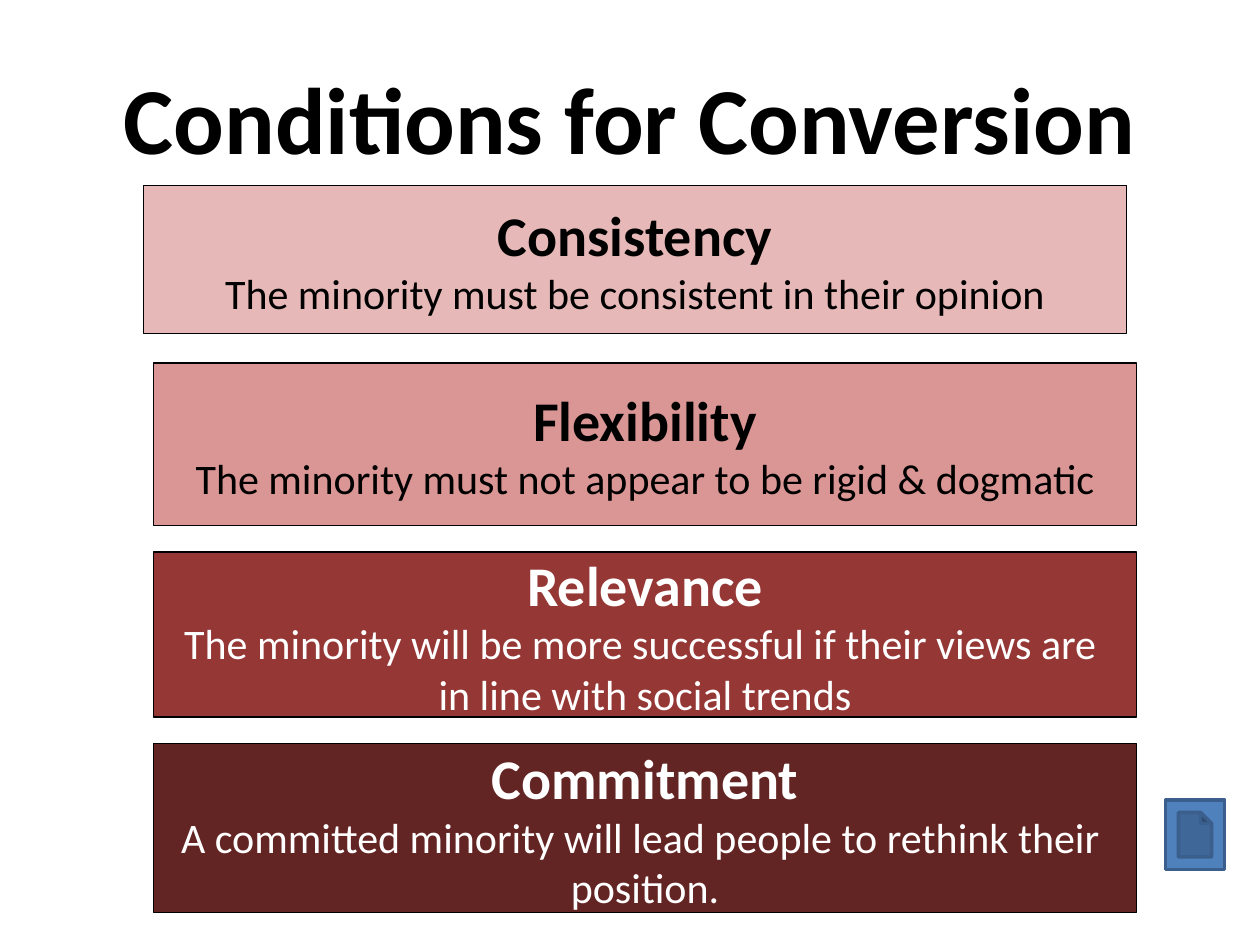
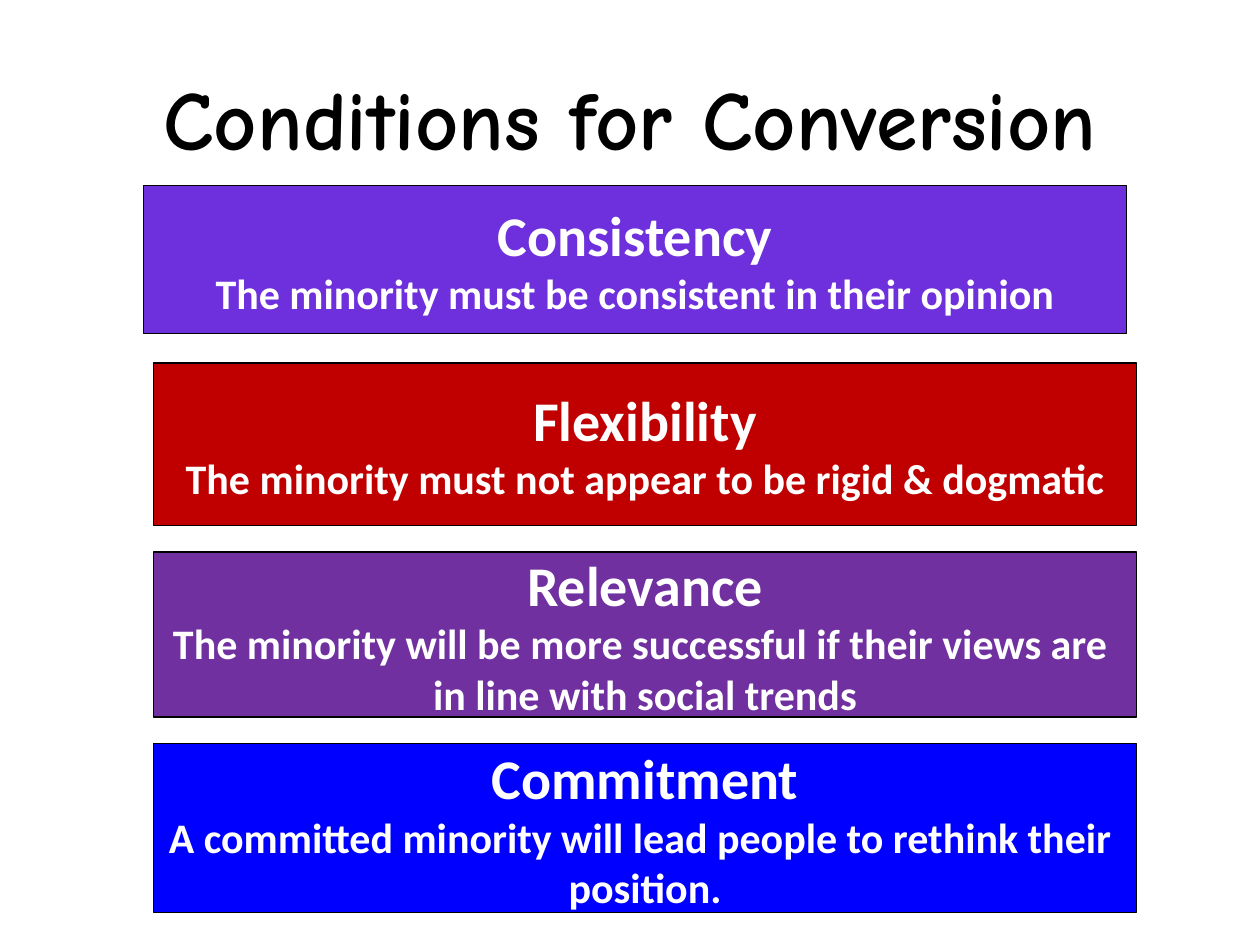
from dataclasses import dataclass
from pptx import Presentation
from pptx.dml.color import RGBColor
from pptx.enum.shapes import MSO_SHAPE
from pptx.enum.text import MSO_ANCHOR, PP_ALIGN
from pptx.util import Pt


@dataclass(frozen=True)
class Theme:
    black: str = "000000"
    white: str = "FFFFFF"
    blue: str = "4F81BD"
    edge: str = "3A5F8C"
    font: str = "Calibri"
    comic: str = "Comic Neue"
    head: int = 32
    body: int = 24
    thin: float = 0.75
    thick: float = 2


theme = Theme()


def write(frame, lines, font, color):
    frame.vertical_anchor = MSO_ANCHOR.MIDDLE
    for i, (text, size, bold) in enumerate(lines):
        para = frame.paragraphs[0] if i == 0 else frame.add_paragraph()
        para.text = text
        para.alignment = PP_ALIGN.CENTER
        para.font.name = font
        para.font.size = Pt(size)
        para.font.bold = bold
        para.font.color.rgb = RGBColor.from_string(color)


def draw(slide, kind, place, fill, line, width):
    shape = slide.shapes.add_shape(kind, *map(Pt, place))
    shape.shadow.inherit = False
    shape.fill.solid()
    shape.fill.fore_color.rgb = RGBColor.from_string(fill)
    shape.line.color.rgb = RGBColor.from_string(line)
    shape.line.width = Pt(width)
    return shape


boxes = [
    (82.08, 105.84, 84.96, "Consistency",
     ["The minority must be consistent in their opinion"]),
    (87.84, 207.36, 92.88, "Flexibility",
     ["The minority must not appear to be rigid & dogmatic"]),
    (87.84, 315.36, 94.32, "Relevance",
     ["The minority will be more successful if their views are ",
      "in line with social trends"]),
    (87.84, 424.8, 96.48, "Commitment",
     ["A committed minority will lead people to rethink their ",
      "position."]),
]

looks = [
    (theme.font, 54, False,
     [("E6B9B8", theme.black), ("D99694", theme.black),
      ("953735", theme.white), ("632523", theme.white)]),
    (theme.comic, 48, True,
     [("6D30DC", theme.white), ("C00000", theme.white),
      ("7030A0", theme.white), ("0000FF", theme.white)]),
]

deck = Presentation()
deck.slide_width = Pt(720)
deck.slide_height = Pt(540)
slides = []

for face, size, bold, tints in looks:
    slide = deck.slides.add_slide(deck.slide_layouts[6])
    slides.append(slide)
    title = slide.shapes.add_textbox(Pt(36), Pt(21.6), Pt(648), Pt(90))
    title.text_frame.word_wrap = True
    write(title.text_frame, [("Conditions for Conversion", size, True)],
          face, theme.black)
    for (left, top, height, head, body), (fill, ink) in zip(boxes, tints):
        box = draw(slide, MSO_SHAPE.RECTANGLE, (left, top, 561.6, height),
                   fill, theme.black, theme.thin)
        box.text_frame.word_wrap = False
        lines = [(head, theme.head, True)]
        lines += [(text, theme.body, bold) for text in body]
        write(box.text_frame, lines, theme.font, ink)

draw(slides[0], MSO_SHAPE.ACTION_BUTTON_DOCUMENT, (666, 457.2, 33.84, 39.6),
     theme.blue, theme.edge, theme.thick)

deck.save("out.pptx")
